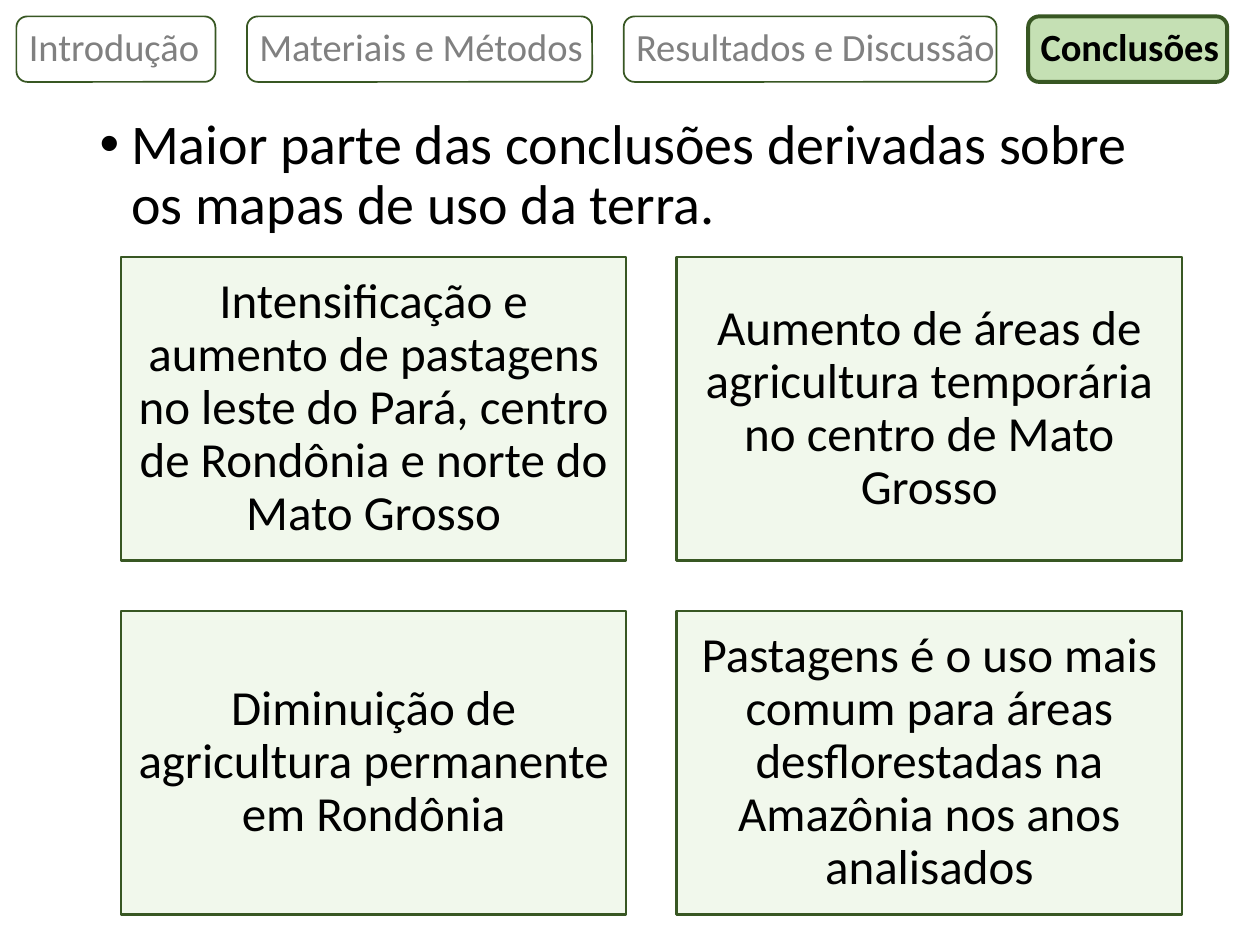
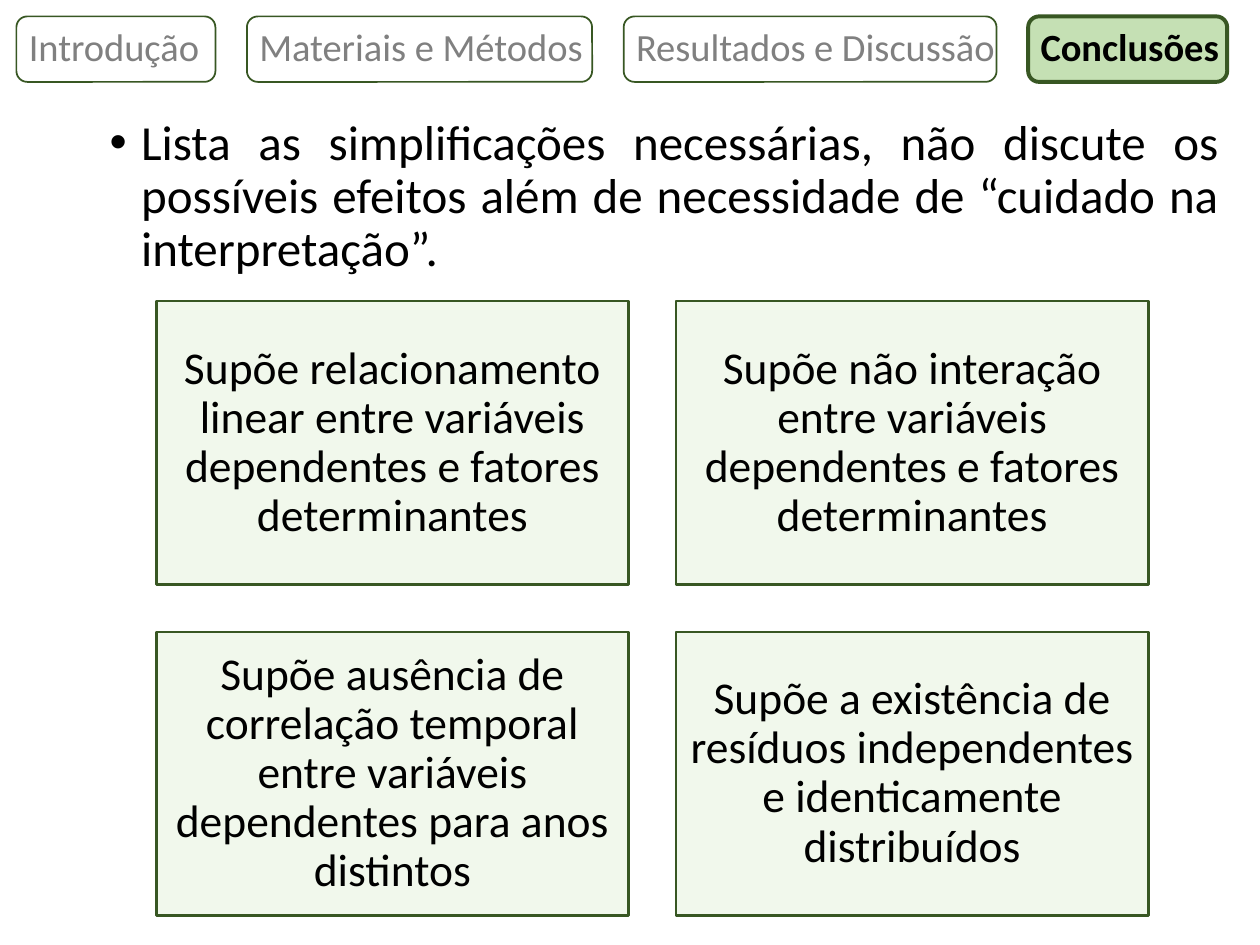
import pptx
import pptx.util
import pptx.dml.color
import pptx.enum.shapes
import pptx.enum.text
import lxml.etree

Inches, Pt = pptx.util.Inches, pptx.util.Pt
SHAPE = pptx.enum.shapes.MSO_SHAPE
ALIGN = pptx.enum.text.PP_ALIGN
MIDDLE = pptx.enum.text.MSO_ANCHOR.MIDDLE
DRAWING_NS = "http://schemas.openxmlformats.org/drawingml/2006/main"

FONT = "Calibri"
BLACK, GREY, DARK_GREEN = "000000", "808080", "385723"
ACTIVE_GREEN, PALE_GREEN = "C5E0B4", "F1F8EC"

SECTIONS = [
    ("Introdução", 1.58),
    ("Materiais e Métodos", 2.74),
    ("Resultados e Discussão", 2.96),
    ("Conclusões", 1.58),
]
ACTIVE_SECTION = "Conclusões"
NAV_LEFT, NAV_TOP, NAV_HEIGHT, NAV_GAP = 0.13, 0.13, 0.52, 0.25
LABEL_EXTRA = 0.2

SLIDES = [
    {
        "statement": "Maior parte das conclusões derivadas sobre os mapas de uso da terra.",
        "area": (0.69, 0.87, 8.62, 5.77),
        "level": 0, "indent": 0.25, "align": ALIGN.LEFT, "size": 32, "before": 10,
        "grid": {"left": 0.96, "top": 2.04, "width": 4.01, "height": 2.41,
                 "gap": 0.4, "inset": 0.12, "size": 28},
        "cards": [
            "Intensificação e aumento de pastagens no leste do Pará, centro de Rondônia e norte do Mato Grosso",
            "Aumento de áreas de agricultura temporária no centro de Mato Grosso",
            "Diminuição de agricultura permanente em Rondônia",
            "Pastagens é o uso mais comum para áreas desflorestadas na Amazônia nos anos analisados",
        ],
    },
    {
        "statement": "Lista as simplificações necessárias, não discute os possíveis efeitos "
                     "além de necessidade de “cuidado na interpretação”.",
        "area": (0.27, 0.89, 9.5, 6.52),
        "level": 1, "indent": 0.75, "align": ALIGN.JUSTIFY, "size": 28, "before": 5,
        "grid": {"left": 1.24, "top": 2.39, "width": 3.75, "height": 2.25,
                 "gap": 0.375, "inset": 0.11, "size": 26},
        "cards": [
            "Supõe relacionamento linear entre variáveis dependentes e fatores determinantes",
            "Supõe não interação entre variáveis dependentes e fatores determinantes",
            "Supõe ausência de correlação temporal entre variáveis dependentes para anos distintos",
            "Supõe a existência de resíduos independentes e identicamente distribuídos",
        ],
    },
]


def color(value):
    return pptx.dml.color.RGBColor.from_string(value)


def write(frame, text, size, ink=BLACK, bold=False, align=ALIGN.LEFT):
    frame.word_wrap = True
    paragraph = frame.paragraphs[0]
    paragraph.text = text
    paragraph.alignment = align
    paragraph.line_spacing = 0.9
    paragraph.font.name = FONT
    paragraph.font.size = Pt(size)
    paragraph.font.bold = bold
    paragraph.font.color.rgb = color(ink)
    return paragraph


def add_panel(slide, preset, area, fill, line_width):
    panel = slide.shapes.add_shape(preset, *map(Inches, area))
    panel.shadow.inherit = False
    if fill:
        panel.fill.solid()
        panel.fill.fore_color.rgb = color(fill)
    else:
        panel.fill.background()
    panel.line.color.rgb = color(DARK_GREEN)
    panel.line.width = Pt(line_width)
    return panel


def add_statement(slide, content):
    body = slide.placeholders[1]
    body.left, body.top, body.width, body.height = map(Inches, content["area"])
    body.text_frame.auto_size = pptx.enum.text.MSO_AUTO_SIZE.NONE
    paragraph = write(body.text_frame, content["statement"], content["size"],
                      align=content["align"])
    paragraph.level = content["level"]
    paragraph.space_before = Pt(content["before"])
    properties = paragraph._p.get_or_add_pPr()
    properties.set("marL", str(Inches(content["indent"])))
    properties.set("indent", str(Inches(-0.25)))
    font = lxml.etree.SubElement(properties, f"{{{DRAWING_NS}}}buFont")
    font.set("typeface", "Arial")
    bullet = lxml.etree.SubElement(properties, f"{{{DRAWING_NS}}}buChar")
    bullet.set("char", "•")


def add_navigation(slide):
    left = NAV_LEFT
    for section, width in SECTIONS:
        active = section == ACTIVE_SECTION
        add_panel(slide, SHAPE.ROUNDED_RECTANGLE, (left, NAV_TOP, width, NAV_HEIGHT),
                  ACTIVE_GREEN if active else None, 2.25 if active else 1)
        label = slide.shapes.add_textbox(
            *map(Inches, (left, NAV_TOP, width + LABEL_EXTRA, NAV_HEIGHT)))
        label.text_frame.vertical_anchor = MIDDLE
        write(label.text_frame, section, 22, BLACK if active else GREY, active)
        left += width + NAV_GAP


def add_cards(slide, cards, grid):
    for index, text in enumerate(cards):
        row, column = divmod(index, 2)
        left = grid["left"] + column * (grid["width"] + grid["gap"])
        top = grid["top"] + row * (grid["height"] + grid["gap"])
        card = add_panel(slide, SHAPE.RECTANGLE, (left, top, grid["width"], grid["height"]),
                         PALE_GREEN, 1.5)
        frame = card.text_frame
        frame.margin_left = frame.margin_right = Inches(grid["inset"])
        frame.margin_top = frame.margin_bottom = Inches(grid["inset"])
        frame.vertical_anchor = MIDDLE
        write(frame, text, grid["size"], align=ALIGN.CENTER)


def main():
    deck = pptx.Presentation()
    deck.slide_width, deck.slide_height = Inches(10), Inches(7.5)
    for content in SLIDES:
        slide = deck.slides.add_slide(deck.slide_layouts[1])
        title = slide.shapes.title
        title.element.getparent().remove(title.element)
        add_statement(slide, content)
        add_navigation(slide)
        add_cards(slide, content["cards"], content["grid"])
    deck.save("out.pptx")


if __name__ == "__main__":
    main()
